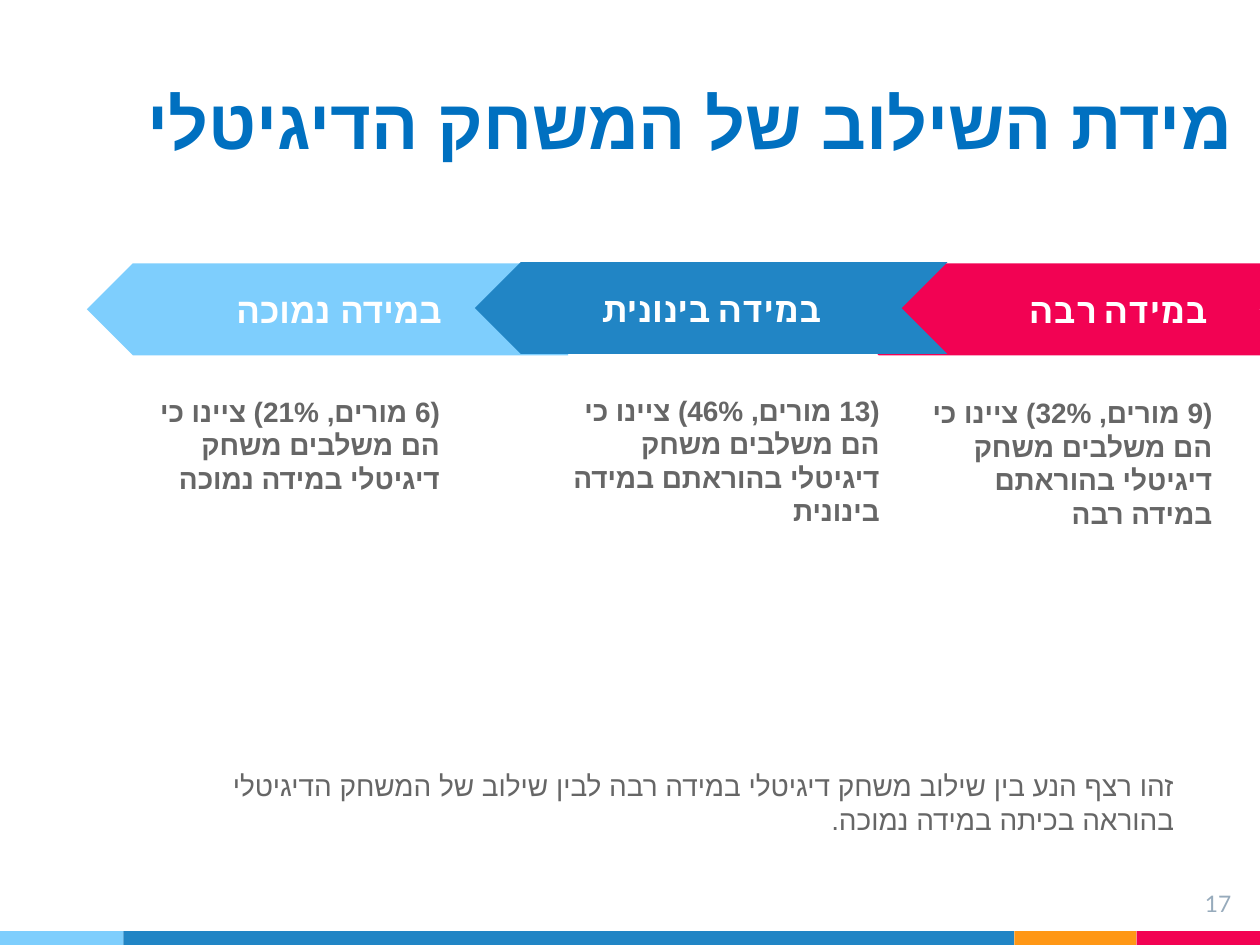
from pptx import Presentation
from pptx.dml.color import RGBColor
from pptx.enum.shapes import MSO_SHAPE
from pptx.enum.text import MSO_ANCHOR, PP_ALIGN
from pptx.oxml.ns import qn
from pptx.util import Inches, Pt
from lxml.etree import SubElement

WIDTH, HEIGHT = 10, 7.5
TITLE_BLUE = RGBColor(0x00, 0x70, 0xC0)
SKY = RGBColor(0x7E, 0xCE, 0xFD)
BLUE = RGBColor(0x21, 0x85, 0xC5)
ORANGE = RGBColor(0xFF, 0x97, 0x15)
RED = RGBColor(0xF2, 0x02, 0x53)
GRAY = RGBColor(0x66, 0x66, 0x66)
PALE = RGBColor(0x97, 0xAB, 0xBC)
WHITE = RGBColor(0xFF, 0xFF, 0xFF)
ARROW_HEIGHT = 0.73

LEVELS = [
    dict(box=(6.61, 2.09, 3.75), kind=MSO_SHAPE.CHEVRON, color=RED, label="במידה רבה",
         font="Manrope", align=PP_ALIGN.RIGHT, right=0.41, text_box=(7.27, 3.04, 2.45, 2.86),
         text="(9 מורים, 32%) ציינו כי הם משלבים משחק דיגיטלי בהוראתם במידה רבה"),
    dict(box=(0.69, 2.09, 3.82), kind=MSO_SHAPE.PENTAGON, color=SKY, label="במידה נמוכה",
         font="Arial", align=PP_ALIGN.CENTER, right=0.1, text_box=(1.05, 3.03, 2.54, 2.86),
         text="(6 מורים, 21%) ציינו כי הם משלבים משחק דיגיטלי במידה נמוכה"),
    dict(box=(3.77, 2.08, 3.75), kind=MSO_SHAPE.CHEVRON, color=BLUE, label="במידה בינונית",
         font="Manrope", align=PP_ALIGN.CENTER, right=0.1, text_box=(4.39, 3.02, 2.69, 2.87),
         text="(13 מורים, 46%) ציינו כי הם משלבים משחק דיגיטלי בהוראתם במידה בינונית"),
]


def inches(box):
    """Turn a box given in inches into slide lengths."""
    return [Inches(length) for length in box]


def write(shape, text, size=16, color=GRAY, font="Arial", bold=False, align=PP_ALIGN.RIGHT,
          anchor=MSO_ANCHOR.TOP, right_to_left=True, inset=0.1, right=0.1):
    """Put one formatted paragraph in a shape."""
    frame = shape.text_frame
    frame.word_wrap = True
    frame.vertical_anchor = anchor
    frame.margin_top = frame.margin_bottom = Inches(inset)
    frame.margin_left, frame.margin_right = Inches(0.1), Inches(right)
    paragraph = frame.paragraphs[0]
    paragraph.alignment = align
    if right_to_left:
        paragraph._p.get_or_add_pPr().set("rtl", "1")
    run = paragraph.add_run()
    run.text = text
    run.font.size, run.font.bold, run.font.name = Pt(size), bold, font
    run.font.color.rgb = color
    SubElement(run._r.get_or_add_rPr(), qn("a:cs")).set("typeface", font)


def add_text(slide, box, text, **style):
    """Add a text box with formatted text."""
    write(slide.shapes.add_textbox(*inches(box)), text, **style)


def add_filled(slide, kind, box, color):
    """Add a flat preset shape without an outline."""
    shape = slide.shapes.add_shape(kind, *inches(box))
    shape.shadow.inherit = False
    shape.fill.solid()
    shape.fill.fore_color.rgb = color
    shape.line.fill.background()
    return shape


def add_title(slide, box, text):
    """Place and fill the title placeholder."""
    title = slide.shapes.title
    title.left, title.top, title.width, title.height = inches(box)
    write(title, text, size=40, color=TITLE_BLUE, bold=True, anchor=MSO_ANCHOR.BOTTOM,
          right_to_left=False)


def add_level(slide, box, kind, color, label, font, align, right, text_box, text):
    """Add a left-pointing arrow with its description below."""
    arrow = add_filled(slide, kind, (*box, ARROW_HEIGHT), color)
    arrow.adjustments[0] = 0.5
    arrow._element.spPr.find(qn("a:xfrm")).set("flipH", "1")
    write(arrow, label, size=20, color=WHITE, font=font, bold=True, align=align,
          anchor=MSO_ANCHOR.MIDDLE, right=right)
    add_text(slide, text_box, text, bold=True)


def add_stripe(slide, left, top, width, height):
    """Add the coloured stripe, split by shares of its width."""
    shares = [(SKY, 0.098), (BLUE, 0.707), (ORANGE, 0.097), (RED, 0.098)]
    for color, share in shares:
        add_filled(slide, MSO_SHAPE.RECTANGLE, (left, top, width * share, height), color)
        left += width * share


def main():
    """Build and save the slide."""
    presentation = Presentation()
    presentation.slide_width, presentation.slide_height = Inches(WIDTH), Inches(HEIGHT)
    slide = presentation.slides.add_slide(presentation.slide_layouts[5])
    add_stripe(slide, 0, HEIGHT - 0.11, WIDTH, 0.11)
    add_title(slide, (0.3, 0.15, 9.58, 1.25), "מידת השילוב של המשחק הדיגיטלי")
    for level in LEVELS:
        add_level(slide, **level)
    add_text(slide, (9.27, 6.96, 0.6, 0.46), "17", size=13, color=PALE, font="Lato",
             right_to_left=False)
    add_text(slide, (1.06, 6.05, 8.51, 0.64),
             "זהו רצף הנע בין שילוב משחק דיגיטלי במידה רבה לבין שילוב של המשחק הדיגיטלי "
             "בהוראה בכיתה במידה נמוכה.", inset=0.05, right=0.25)
    presentation.save("out.pptx")


if __name__ == "__main__":
    main()
